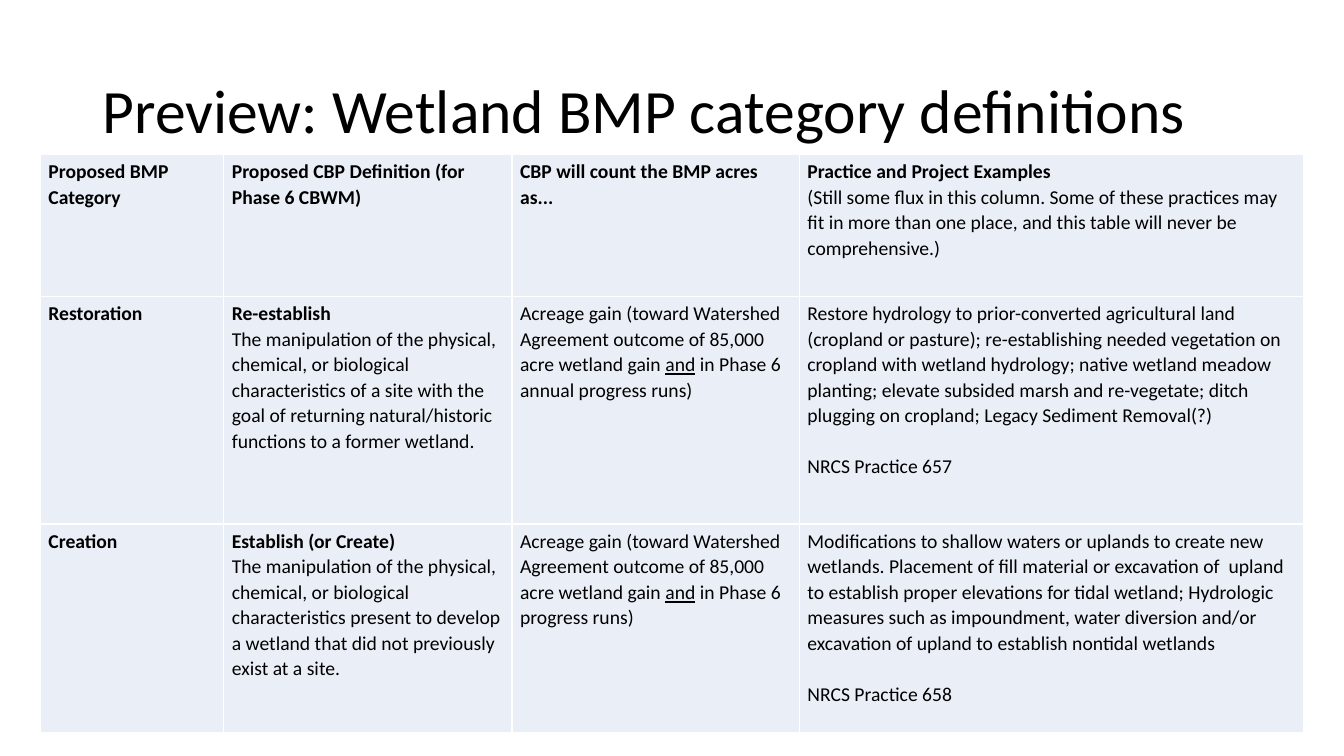
from dataclasses import dataclass

from lxml.etree import SubElement as Sub
from pptx import Presentation
from pptx.dml.color import RGBColor as Color
from pptx.enum.text import MSO_ANCHOR as Anchor, MSO_AUTO_SIZE as Fit, PP_ALIGN as Align
from pptx.oxml.ns import qn
from pptx.util import Inches, Pt


@dataclass(frozen=True)
class Theme:
    font: str = "Calibri"
    ink: str = "000000"
    cell: str = "EAEFF7"
    rule: str = "FFFFFF"
    head: int = 44
    body: int = 14
    lead: float = 1.07
    gap: float = 18.3


LOOK = Theme()
WIDE, HIGH = Inches(13.33), Inches(7.5)

# Percent of the slide's width and height
COLS = [13.65, 21.45, 21.38, 37.51]
ROWS = [18.8, 30.13, 27.6]

# "*" opens a bold paragraph, "+" one set off by a line, "_" encloses underlining
ROWS_TEXT = [
    [
        ["*Proposed BMP Category"],
        ["*Proposed CBP Definition (for Phase 6 CBWM)"],
        ["*CBP will count the BMP acres as..."],
        ["*Practice and Project Examples",
         "(Still some flux in this column. Some of these practices may fit in more "
         "than one place, and this table will never be comprehensive.)"],
    ],
    [
        ["*Restoration"],
        ["*Re-establish",
         "The manipulation of the physical, chemical, or biological characteristics "
         "of a site with the goal of returning natural/historic functions to a "
         "former wetland."],
        ["Acreage gain (toward Watershed Agreement outcome of 85,000 acre wetland "
         "gain _and_ in Phase 6 annual progress runs)"],
        ["Restore hydrology to prior-converted agricultural land (cropland or "
         "pasture); re-establishing needed vegetation on cropland with wetland "
         "hydrology; native wetland meadow planting; elevate subsided marsh and "
         "re-vegetate; ditch plugging on cropland; Legacy Sediment Removal(?)",
         "+NRCS Practice 657"],
    ],
    [
        ["*Creation"],
        ["*Establish (or Create)",
         "The manipulation of the physical, chemical, or biological characteristics "
         "present to develop a wetland that did not previously exist at a site."],
        ["Acreage gain (toward Watershed Agreement outcome of 85,000 acre wetland "
         "gain _and_ in Phase 6 progress runs)"],
        ["Modifications to shallow waters or uplands to create new wetlands. "
         "Placement of fill material or excavation of  upland to establish proper "
         "elevations for tidal wetland; Hydrologic measures such as impoundment, "
         "water diversion and/or excavation of upland to establish nontidal wetlands",
         "+NRCS Practice 658"],
    ],
]


def across(share):
    return int(WIDE * share / 100)


def down(share):
    return int(HIGH * share / 100)


def style(run, size, bold=False, under=False):
    font = run.font
    font.name, font.size = LOOK.font, Pt(size)
    font.bold, font.underline = bold, under
    font.color.rgb = Color.from_string(LOOK.ink)


def add_title(slide, text):
    title = slide.shapes.title
    title.left, title.top = across(6.9), down(5.33)
    title.width, title.height = across(86.27), down(19.33)
    frame = title.text_frame
    frame.text = text
    frame.word_wrap, frame.auto_size = True, Fit.NONE
    frame.vertical_anchor = Anchor.MIDDLE
    para = frame.paragraphs[0]
    para.alignment, para.line_spacing = Align.LEFT, 0.9
    style(para.runs[0], LOOK.head)


def write(para, line):
    """Set one paragraph from its marked-up line."""
    para.line_spacing = LOOK.lead
    if line.startswith("+"):
        para.space_before = Pt(LOOK.gap)
    bold = line.startswith("*")
    for i, part in enumerate(line.lstrip("*+").split("_")):
        run = para.add_run()
        run.text = part
        style(run, LOOK.body, bold, i % 2 == 1)


def edge(cell):
    """Draw the cell's four borders; they must come before its fill."""
    props = cell._tc.get_or_add_tcPr()
    for side in ("lnL", "lnR", "lnT", "lnB"):
        line = Sub(props, qn(f"a:{side}"), w=str(Pt(1)))
        Sub(Sub(line, qn("a:solidFill")), qn("a:srgbClr"), val=LOOK.rule)


def fill_cell(cell, lines):
    edge(cell)
    cell.fill.solid()
    cell.fill.fore_color.rgb = Color.from_string(LOOK.cell)
    cell.margin_left = cell.margin_right = Inches(0.08)
    cell.margin_top = cell.margin_bottom = Inches(0.04)
    cell.vertical_anchor = Anchor.TOP
    frame = cell.text_frame
    for i, line in enumerate(lines):
        write(frame.add_paragraph() if i else frame.paragraphs[0], line)


def add_grid(slide):
    frame = slide.shapes.add_table(len(ROWS), len(COLS), across(3), down(20.4),
                                   across(sum(COLS)), down(sum(ROWS)))
    table = frame.table
    table.first_row = table.horz_banding = False
    for col, share in zip(table.columns, COLS):
        col.width = across(share)
    for row, share, texts in zip(table.rows, ROWS, ROWS_TEXT):
        row.height = down(share)
        for cell, lines in zip(row.cells, texts):
            fill_cell(cell, lines)


def main():
    deck = Presentation()
    deck.slide_width, deck.slide_height = WIDE, HIGH
    slide = deck.slides.add_slide(deck.slide_layouts[5])
    add_title(slide, "Preview: Wetland BMP category definitions")
    add_grid(slide)
    deck.save("out.pptx")


if __name__ == "__main__":
    main()
